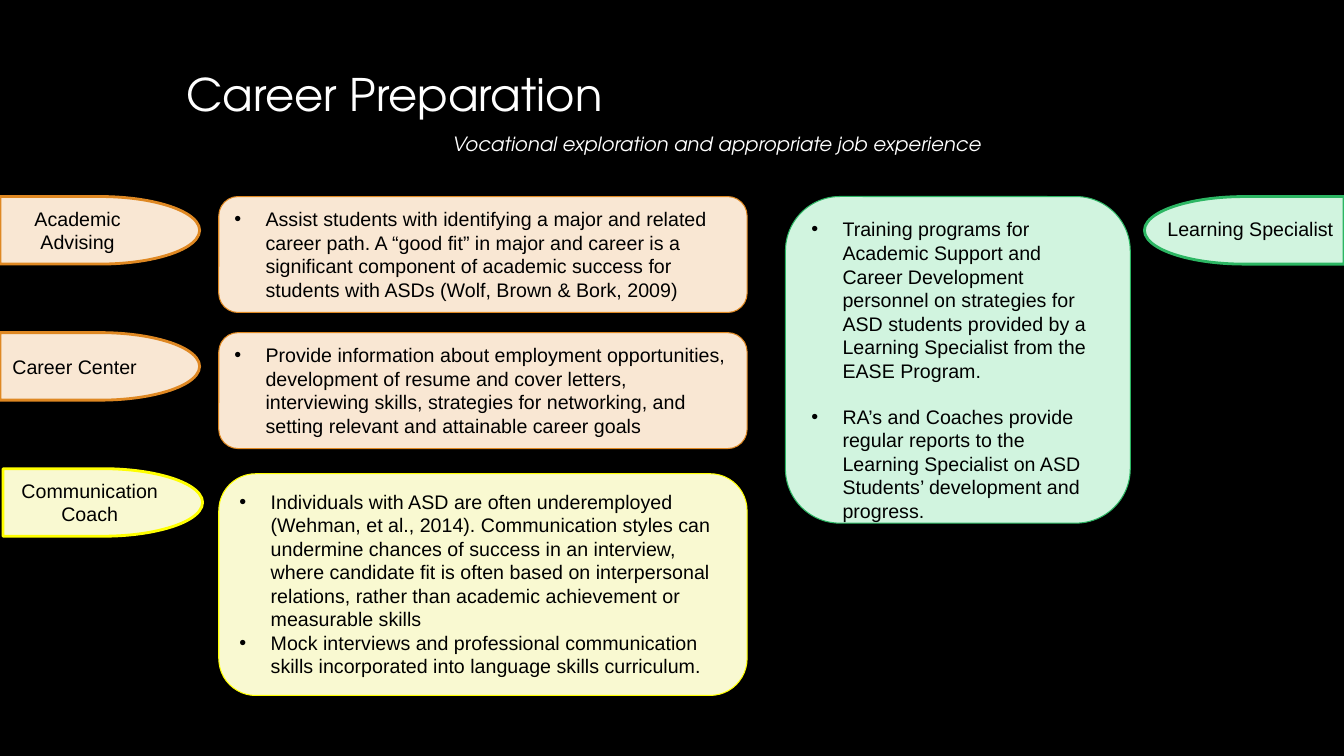
"""Builds the Career Preparation slide with its support roles and their tasks."""
import pptx
import pptx.util
import pptx.dml.color
import pptx.enum.shapes
import pptx.enum.text
import pptx.oxml

Inches, Pt = pptx.util.Inches, pptx.util.Pt
RGBColor = pptx.dml.color.RGBColor
KIND = pptx.enum.shapes.MSO_SHAPE
ALIGN, ANCHOR = pptx.enum.text.PP_ALIGN, pptx.enum.text.MSO_ANCHOR

BLACK, WHITE = RGBColor(0, 0, 0), RGBColor(255, 255, 255)
ORANGE = RGBColor(0xF9, 0xE7, 0xD3), RGBColor(0xDF, 0x88, 0x22)
YELLOW = RGBColor(0xF9, 0xF9, 0xD1), RGBColor(0xFF, 0xFF, 0x00)
GREEN = RGBColor(0xD1, 0xF4, 0xDF), RGBColor(0x2C, 0xB6, 0x63)
TITLE_FONT, BODY_FONT = "TeX Gyre Adventor", "Arial"
NS = "http://schemas.openxmlformats.org/drawingml/2006/main"
TAB_W, TAB_H = 1.98, 0.67
INDENT = 0.31

TITLE = "Career Preparation"
SUBTITLE = "Vocational exploration and appropriate job experience"
ROLES = [
    dict(name="Academic Advising", colors=ORANGE, tab=(0, 1.95),
         label=(0.03, 2, 1.48, 0.57), card=(2.17, 1.95, 5.24, 1.15),
         tasks=["Assist students with identifying a major and related career path. "
                "A “good fit” in major and career is a significant component of "
                "academic success for students with ASDs (Wolf, Brown & Bork, 2009)"]),
    dict(name="Career Center", colors=ORANGE, tab=(0, 3.3),
         label=(0, 3.47, 1.48, 0.34), card=(2.17, 3.3, 5.24, 1.15),
         tasks=["Provide information about employment opportunities, development of "
                "resume and cover letters, interviewing skills, strategies for "
                "networking, and setting relevant and attainable career goals"]),
    dict(name="Communication Coach", colors=YELLOW, tab=(0.03, 4.65),
         label=(0.03, 4.7, 1.72, 0.57), card=(2.17, 4.7, 5.24, 2.2),
         tasks=["Individuals with ASD are often underemployed (Wehman, et al., 2014). "
                "Communication styles can undermine chances of success in an interview, "
                "where candidate fit is often based on interpersonal relations, rather "
                "than academic achievement or measurable skills",
                "Mock interviews and professional communication skills incorporated "
                "into language skills curriculum."]),
    dict(name="Learning Specialist", colors=GREEN, tab=(11.35, 1.95), turn=180,
         label=(11.48, 2.1, 1.86, 0.34), card=(7.79, 1.95, 3.42, 3.24), gap=16,
         align=ALIGN.LEFT, wrap=False,
         tasks=["Training programs for Academic Support and Career Development "
                "personnel on strategies for ASD students provided by a Learning "
                "Specialist from the EASE Program.",
                "RA’s and Coaches provide regular reports to the Learning Specialist "
                "on ASD Students’ development and progress."]),
]


def write(frame, *lines, font=BODY_FONT, size=14, color=BLACK, italic=False,
          align=ALIGN.LEFT, anchor=ANCHOR.TOP, wrap=True, bullet=False, gap=0,
          spacing=None):
    frame.word_wrap = wrap
    frame.vertical_anchor = anchor
    for i, line in enumerate(lines):
        para = frame.add_paragraph() if i else frame.paragraphs[0]
        para.text = line
        para.alignment = align
        if spacing:
            para.line_spacing = spacing
        if i and gap:
            para.space_before = Pt(gap)
        if bullet:
            props = para._p.get_or_add_pPr()
            props.set("marL", str(Inches(INDENT)))
            props.set("indent", str(-Inches(INDENT)))
            props.append(pptx.oxml.parse_xml(f'<a:buFont xmlns:a="{NS}" typeface="Arial"/>'))
            props.append(pptx.oxml.parse_xml(f'<a:buChar xmlns:a="{NS}" char="•"/>'))
        style = para.font
        style.name, style.size, style.italic = font, Pt(size), italic
        style.color.rgb = color


def add_box(slide, place):
    return slide.shapes.add_textbox(*map(Inches, place)).text_frame


def add_shape(slide, kind, place, colors, width):
    shape = slide.shapes.add_shape(kind, *map(Inches, place))
    shape.shadow.inherit = False
    shape.fill.solid()
    shape.fill.fore_color.rgb, shape.line.color.rgb = colors
    shape.line.width = Pt(width)
    return shape


def add_role(slide, role):
    tab = add_shape(slide, KIND.FLOWCHART_DELAY, (*role["tab"], TAB_W, TAB_H),
                    role["colors"], 2)
    tab.rotation = role.get("turn", 0)
    write(add_box(slide, role["label"]), role["name"],
          align=role.get("align", ALIGN.CENTER), wrap=role.get("wrap", True))
    card = add_shape(slide, KIND.ROUNDED_RECTANGLE, role["card"], role["colors"], 0.75)
    write(card.text_frame, *role["tasks"], bullet=True, gap=role.get("gap", 0))


def main():
    deck = pptx.Presentation()
    deck.slide_width, deck.slide_height = Inches(13.33), Inches(7.5)
    slide = deck.slides.add_slide(deck.slide_layouts[6])
    slide.background.fill.solid()
    slide.background.fill.fore_color.rgb = BLACK
    title = add_box(slide, (1.75, 0.65, 10.5, 0.62))
    title.margin_top = title.margin_bottom = Inches(0.1)
    write(title, TITLE, font=TITLE_FONT, size=32, color=WHITE,
          anchor=ANCHOR.MIDDLE, spacing=0.9)
    write(add_box(slide, (4.39, 1.26, 8.02, 0.34)), SUBTITLE,
          font=TITLE_FONT, color=WHITE, italic=True)
    for role in ROLES:
        add_role(slide, role)
    deck.save("out.pptx")


if __name__ == "__main__":
    main()
